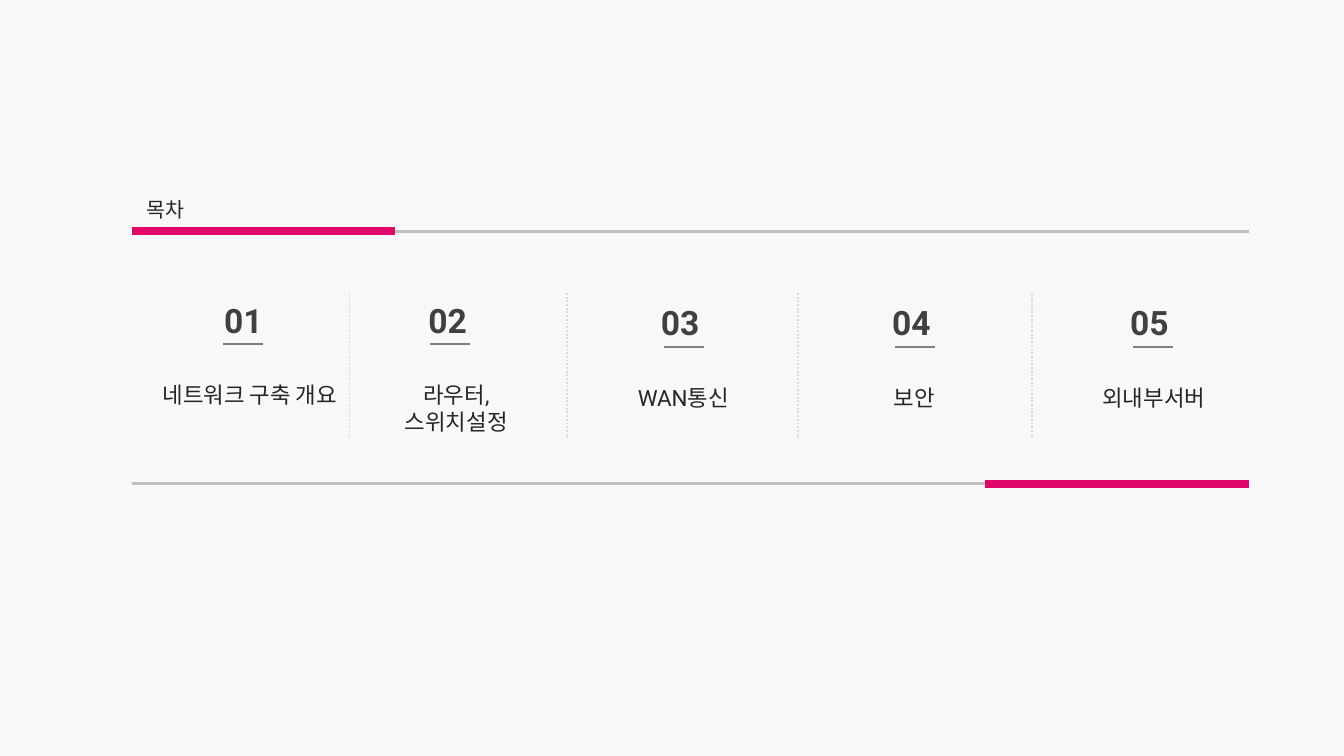
from lxml.etree import SubElement
from pptx import Presentation
from pptx.dml.color import RGBColor
from pptx.enum.dml import MSO_LINE
from pptx.enum.shapes import MSO_CONNECTOR
from pptx.enum.text import PP_ALIGN
from pptx.oxml.ns import qn
from pptx.util import Inches, Pt

COLORS = {
    "background": "F8F8F8",
    "accent": "E00868",
    "rule": "BFBFBF",
    "divider": "D9D9D9",
    "underline": "808080",
    "number": "404040",
    "text": "262626",
}
FONT = "Roboto"

TITLE = "목차"
ITEMS = [
    {"label": "네트워크 구축 개요", "top": 2.18, "number_x": 1.57, "line_x": 1.66, "label_x": 1.11, "label_w": 1.5, "label_h": 0.3},
    {"label": "라우터, 스위치설정", "top": 2.18, "number_x": 3.09, "line_x": 3.2, "label_x": 2.79, "label_w": 1.21, "label_h": 0.5},
    {"label": "WAN통신", "top": 2.2, "number_x": 4.82, "line_x": 4.94, "label_x": 4.4, "label_w": 1.37, "label_h": 0.3},
    {"label": "보안", "top": 2.2, "number_x": 6.54, "line_x": 6.66, "label_x": 6.12, "label_w": 1.37, "label_h": 0.3},
    {"label": "외내부서버", "top": 2.2, "number_x": 8.31, "line_x": 8.43, "label_x": 7.9, "label_w": 1.37, "label_h": 0.3},
]
DIVIDERS = [2.6, 4.22, 5.94, 7.68]
RULES = [
    (2, 9.29, 1.72, "rule", 1.5),
    (0.98, 2.94, 1.72, "accent", 4.5),
    (0.98, 8.28, 3.6, "rule", 1.5),
    (7.33, 9.29, 3.6, "accent", 4.5),
]


def add_text(s, text, x, y, w, h, size=12, color="text", bold=False, align=PP_ALIGN.LEFT):
    tf = s.shapes.add_textbox(Inches(x), Inches(y), Inches(w), Inches(h)).text_frame
    tf.word_wrap = True
    p = tf.paragraphs[0]
    p.alignment = align
    r = p.add_run()
    r.text = text
    r.font.name = FONT
    r.font.size = Pt(size)
    r.font.bold = bold
    r.font.color.rgb = RGBColor.from_string(COLORS[color])


def add_line(s, x1, y1, x2, y2, color, width=1, dash=None):
    line = s.shapes.add_connector(
        MSO_CONNECTOR.STRAIGHT, Inches(x1), Inches(y1), Inches(x2), Inches(y2)
    )
    line.line.color.rgb = RGBColor.from_string(COLORS[color])
    line.line.width = Pt(width)
    if dash:
        line.line.dash_style = dash
    SubElement(line._element.spPr, qn("a:effectLst"))


def main():
    prs = Presentation()
    prs.slide_width = Inches(10)
    prs.slide_height = Inches(10) * 9 // 16
    s = prs.slides.add_slide(prs.slide_layouts[6])
    fill = s.background.fill
    fill.solid()
    fill.fore_color.rgb = RGBColor.from_string(COLORS["background"])

    for x1, x2, y, color, width in RULES:
        add_line(s, x1, y, x2, y, color, width)
    add_text(s, TITLE, 0.99, 1.42, 1.85, 0.29, size=11)

    for x in DIVIDERS:
        add_line(s, x, 2.18, x, 3.26, "divider", dash=MSO_LINE.ROUND_DOT)

    for number, item in enumerate(ITEMS, 1):
        top = item["top"]
        add_text(s, f"{number:02}", item["number_x"], top, 1.04, 0.4, size=18, color="number", bold=True)
        add_line(s, item["line_x"], top + 0.38, item["line_x"] + 0.3, top + 0.38, "underline")
        add_text(
            s, item["label"], item["label_x"], top + 0.61, item["label_w"], item["label_h"],
            align=PP_ALIGN.CENTER,
        )

    prs.save("out.pptx")


if __name__ == "__main__":
    main()
